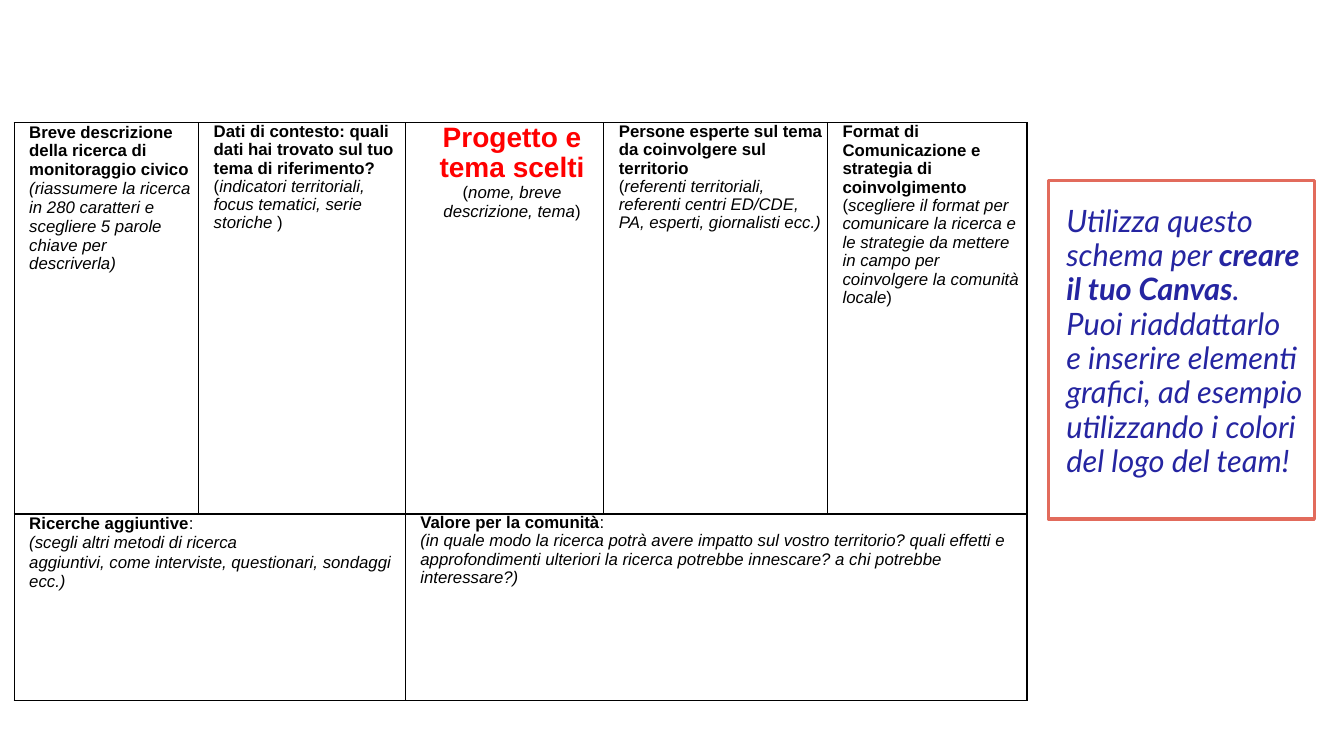
from lxml.etree import SubElement
from pptx import Presentation
from pptx.dml.color import RGBColor
from pptx.enum.shapes import MSO_SHAPE as Shape
from pptx.enum.text import PP_ALIGN as Align
from pptx.oxml import parse_xml
from pptx.oxml.ns import nsdecls, qn
from pptx.util import Pt

BLACK = RGBColor(0x00, 0x00, 0x00)
WHITE = RGBColor(0xFF, 0xFF, 0xFF)
RED = RGBColor(0xFF, 0x00, 0x00)
INDIGO = RGBColor(0x25, 0x25, 0xA1)
CORAL = RGBColor(0xE2, 0x6B, 0x5C)

COLUMN_WIDTHS = (131.8, 147.6, 141.8, 159.8, 142.6)
ROW_HEIGHTS = (279.4, 133.2)

# Each paragraph is a list of (text, style); style letters: b bold, i italic, t title
# Canvas sections: row, column, last column, line spacing, left indent, alignment, paragraphs
SECTIONS = [
    (0, 0, 0, 1.0, 7.2, Align.LEFT, [
        [("Breve descrizione della ricerca di monitoraggio civico", "b")],
        [("(riassumere la ricerca in 280 caratteri e scegliere "
          "5 parole chiave per descriverla)", "i")]]),
    (0, 1, 1, 0.97, 7.2, Align.LEFT, [
        [("Dati di contesto: quali dati hai trovato sul tuo tema di riferimento?", "b")],
        [("(", ""), ("indicatori territoriali, focus tematici, serie storiche ", "i"),
         (")", "")]]),
    (0, 2, 2, 0.98, 10.8, Align.CENTER, [
        [("Progetto e tema scelti ", "bt"), ("(", ""),
         ("nome, breve descrizione, tema", "i"), (")", "")]]),
    (0, 3, 3, 0.97, 7.2, Align.LEFT, [
        [("Persone esperte sul tema da coinvolgere sul territorio", "b")],
        [("(", ""), ("referenti territoriali, referenti centri ED/CDE, PA, "
                     "esperti, giornalisti ecc.)", "i")]]),
    (0, 4, 4, 0.98, 7.2, Align.LEFT, [
        [("Format di Comunicazione e strategia di coinvolgimento", "b")],
        [("(", ""), ("scegliere il format per comunicare la ricerca e le strategie da "
                     "mettere in campo per coinvolgere la comunità locale", "i"),
         (")", "")]]),
    (1, 0, 1, 1.02, 7.2, Align.LEFT, [
        [("Ricerche aggiuntive", "b"), (":", "")],
        [("(scegli altri metodi di ricerca", "i")],
        [("aggiuntivi, come interviste, questionari, sondaggi ecc.)", "i")]]),
    (1, 2, 4, 0.97, 7.2, Align.LEFT, [
        [("Valore per la comunità", "b"), (":", "")],
        [("(in quale modo la ricerca potrà avere impatto sul vostro territorio? quali "
          "effetti e approfondimenti ulteriori la ricerca potrebbe innescare? "
          "a chi potrebbe interessare?)", "i")]]),
]

INSTRUCTIONS = [
    [("Utilizza questo schema per ", "i"), ("creare", "bi")],
    [("il tuo Canvas", "bi"), (".", "i")],
    [("Puoi riaddattarlo", "i")],
    [("e inserire elementi grafici, ad esempio utilizzando i colori", "i")],
    [("del logo del team!", "i")],
]


def write_paragraphs(frame, paragraphs, font, size, color, spacing, align=Align.LEFT, indent=0):
    for number, pieces in enumerate(paragraphs):
        line = frame.paragraphs[0] if number == 0 else frame.add_paragraph()
        line.alignment = align
        line.line_spacing = spacing
        line.space_before = line.space_after = Pt(0)
        properties = line._p.get_or_add_pPr()
        properties.set("marL", str(Pt(indent)))
        properties.set("indent", "0")
        SubElement(properties, qn("a:buNone"))
        line.font.name = font
        styles = [style for _, style in pieces]
        if not any("t" in style for style in styles):
            line.font.size = Pt(size)
            line.font.color.rgb = color
        for letter, attribute in (("b", "bold"), ("i", "italic")):
            if len({letter in style for style in styles}) == 1:
                setattr(line.font, attribute, letter in styles[0])
        for text, style in pieces:
            run = line.add_run()
            run.text = text
            if len(pieces) > 1:
                run.font.bold = "b" in style
                run.font.italic = "i" in style
            if line.font.size is None:
                run.font.size = Pt(20 if "t" in style else size)
                run.font.color.rgb = RED if "t" in style else color


def style_cell(cell):
    cell.margin_left = cell.margin_right = Pt(3.6)
    cell.margin_top = cell.margin_bottom = Pt(0)
    properties = cell._tc.get_or_add_tcPr()
    for side in "LRTB":
        properties.append(parse_xml(
            f'<a:ln{side} {nsdecls("a")} w="{Pt(1)}"><a:solidFill>'
            f'<a:srgbClr val="{BLACK}"/></a:solidFill></a:ln{side}>'))
    cell.fill.solid()
    cell.fill.fore_color.rgb = WHITE


def add_canvas(slide):
    canvas = slide.shapes.add_table(
        len(ROW_HEIGHTS), len(COLUMN_WIDTHS), Pt(10.1), Pt(87.8),
        Pt(sum(COLUMN_WIDTHS)), Pt(sum(ROW_HEIGHTS))).table
    canvas.first_row = canvas.horz_banding = False
    for column, width in zip(canvas.columns, COLUMN_WIDTHS):
        column.width = Pt(width)
    for row, height in zip(canvas.rows, ROW_HEIGHTS):
        row.height = Pt(height)
    for cell in canvas.iter_cells():
        style_cell(cell)
    for row, first, last, spacing, indent, align, paragraphs in SECTIONS:
        section = canvas.cell(row, first)
        if last > first:
            section.merge(canvas.cell(row, last))
        write_paragraphs(section.text_frame, paragraphs, "Arial", 12, BLACK,
                         spacing, align, indent)


def add_instructions(slide):
    frame = slide.shapes.add_textbox(Pt(754.6), Pt(142.6), Pt(195.1), Pt(202.3)).text_frame
    frame.word_wrap = True
    write_paragraphs(frame, INSTRUCTIONS, "Lato", 22, INDIGO, 0.93)


def add_border(slide):
    border = slide.shapes.add_shape(Shape.RECTANGLE, Pt(748.8), Pt(128.9), Pt(190.1), Pt(241.9))
    border.shadow.inherit = False
    border.fill.background()
    border.line.color.rgb = CORAL
    border.line.width = Pt(2.25)


def main():
    deck = Presentation()
    deck.slide_width, deck.slide_height = Pt(960), Pt(540)
    slide = deck.slides.add_slide(deck.slide_layouts[6])
    # Instructions on the right, canvas on the left
    add_instructions(slide)
    add_canvas(slide)
    add_border(slide)
    deck.save("out.pptx")


if __name__ == "__main__":
    main()
